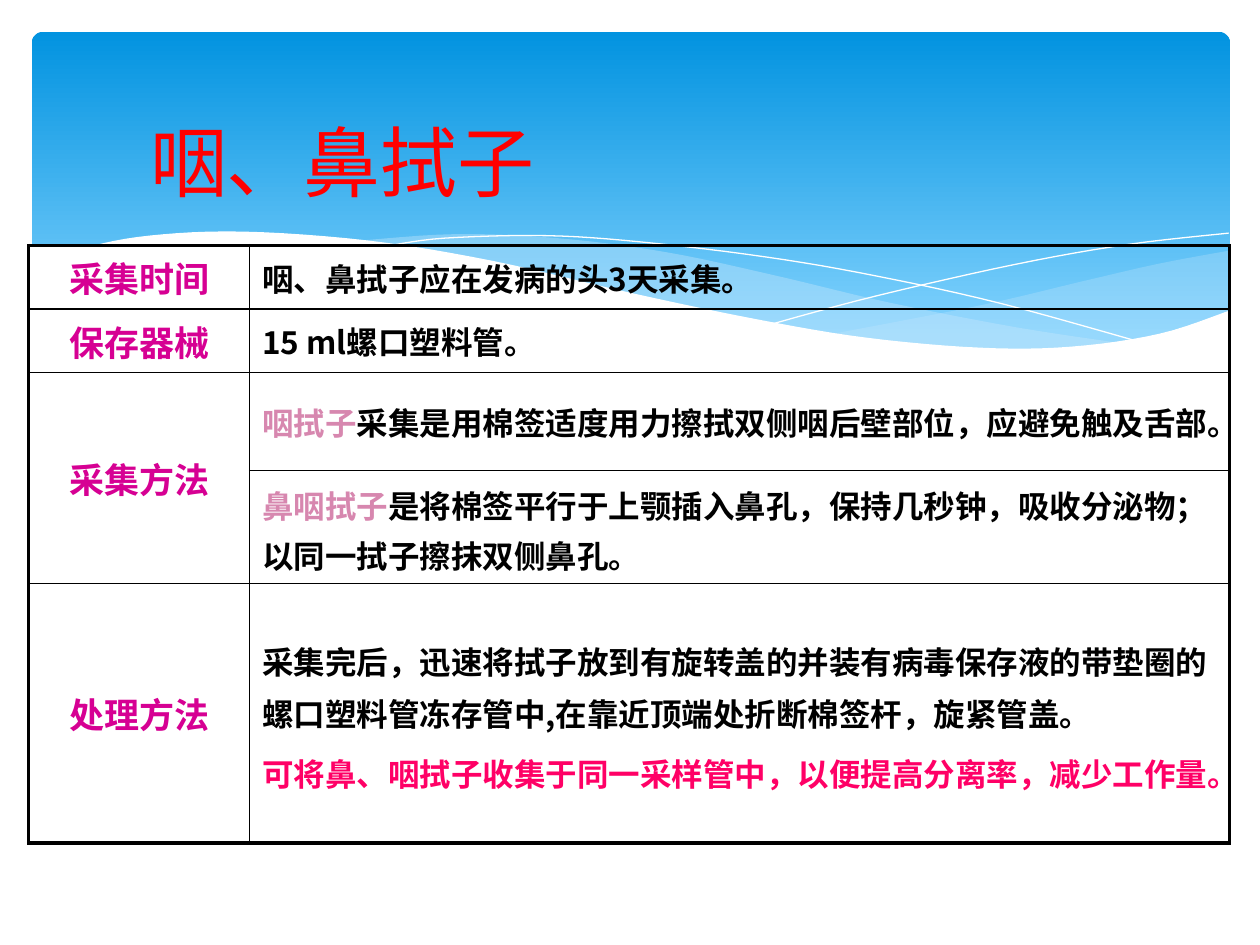
from dataclasses import dataclass

from lxml.etree import SubElement
from pptx import Presentation
from pptx.dml.color import RGBColor
from pptx.enum.shapes import MSO_SHAPE
from pptx.enum.text import MSO_ANCHOR, PP_ALIGN
from pptx.oxml.ns import qn
from pptx.util import Cm, Pt


@dataclass(frozen=True)
class Theme:
    font: str = "Noto Sans CJK SC"
    note_font: str = "Arial"
    title_size: float = 44
    label_size: float = 20
    body_size: float = 18
    thin: float = 1
    thick: float = 2.25
    title: str = "FF0000"
    label: str = "D60093"
    body: str = "000000"
    swab: str = "D787AF"
    note: str = "FF0066"
    border: str = "000000"
    white: str = "FFFFFF"
    veil: str = "C6E7FC"
    sky_top: str = "0293E0"
    sky_bottom: str = "83D3FE"


THEME = Theme()

RIGHT_VEIL = [
    [(24.79, 5.05), (23.39, 5.31), (21.87, 5.66), (19.79, 6.15), (16.79, 6.73)],
    [(16.79, 6.73), (18.24, 6.91), (20.12, 7.04), (21.69, 7.01), (23.19, 6.78),
     (24.79, 6.27)],
]
CENTRE_VEIL = [
    [(22.68, 6.93), (20.5, 6.6), (17.93, 6.1), (15.57, 5.54), (13.41, 5.08),
     (11.23, 4.8), (9.17, 4.72), (7.26, 4.85)],
    [(7.26, 4.85), (9.73, 5.26), (12.47, 5.89), (15.27, 6.48), (17.65, 6.86),
     (19.94, 7.06), (22.68, 6.93)],
]
FALLING_LINE = [(7.85, 4.95), (8.97, 4.8), (11, 4.75), (12.95, 4.88),
                (15.44, 5.18), (17.65, 5.56), (20.19, 6.12), (23.04, 6.91)]
RISING_LINE = [(15.57, 6.53), (17.65, 5.97), (20.47, 5.33), (22.73, 4.93),
               (24.77, 4.7)]
WHITE_CREST = [(24.82, 6.25), (23.37, 6.73), (21.59, 6.99), (19.76, 7.01),
               (17.48, 6.81), (15.32, 6.45), (12.78, 5.92), (9.93, 5.26),
               (7.42, 4.85), (4.9, 4.67), (3.02, 4.75), (1.7, 5), (0.58, 5.41)]
WHITE_BASE = [(0.58, 8.36), (24.82, 8.36)]

# Each row: label, line spacing, paragraphs made of (text, colour, font) spans.
ROWS = [
    ("采集时间", 1, [[("咽、鼻拭子应在发病的头3天采集。", THEME.body, THEME.font)]]),
    ("保存器械", 1, [[("15 ml螺口塑料管。", THEME.body, THEME.font)]]),
    ("采集方法", 1, [[
        ("咽拭子", THEME.swab, THEME.font),
        ("采集是用棉签适度用力擦拭双侧咽后壁部位，应避免触及舌部。", THEME.body, THEME.font),
    ]]),
    (None, 1.1, [[
        ("鼻咽拭子", THEME.swab, THEME.font),
        ("是将棉签平行于上颚插入鼻孔，保持几秒钟，吸收分泌物；以同一拭子擦抹双侧鼻孔。",
         THEME.body, THEME.font),
    ]]),
    ("处理方法", 1.15, [
        [("采集完后，迅速将拭子放到有旋转盖的并装有病毒保存液的带垫圈的螺口塑料管冻存管中,"
          "在靠近顶端处折断棉签杆，旋紧管盖。", THEME.body, THEME.font)],
        [("可将鼻、咽拭子收集于同一采样管中，以便提高分离率，减少工作量。",
          THEME.note, THEME.note_font)],
    ]),
]
COLUMN_WIDTHS = [4.45, 19.76]
ROW_HEIGHTS = [1.22, 1.22, 1.98, 2.03, 5.23]


def smooth_curve(knots, steps=6):
    """Return points on a Catmull-Rom curve through the knots."""
    padded = [knots[0], *knots, knots[-1]]
    points = [knots[0]]
    for a, b, c, d in zip(padded, padded[1:], padded[2:], padded[3:]):
        for step in range(1, steps + 1):
            t = step / steps
            points.append(tuple(
                q + t * (r - p + t * (2 * p - 5 * q + 4 * r - s
                                      + t * (3 * (q - r) + s - p))) / 2
                for p, q, r, s in zip(a, b, c, d)))
    return points


class SlideBuilder:
    def __init__(self, page, theme):
        self.page = page
        self.theme = theme

    def add_span(self, para, text, size, color, font, bold=True):
        span = para.add_run()
        span.text = text
        span.font.size = Pt(size)
        span.font.bold = bold
        span.font.name = font
        span.font.color.rgb = RGBColor.from_string(color)
        SubElement(span.font._element, qn("a:ea"), typeface=self.theme.font)

    def add_sky(self, left, top, width, height):
        sky = self.page.shapes.add_shape(
            MSO_SHAPE.ROUNDED_RECTANGLE, Cm(left), Cm(top), Cm(width), Cm(height))
        sky.adjustments[0] = 0.034
        sky.shadow.inherit = False
        sky.line.fill.background()
        sky.fill.gradient()
        sky.fill.gradient_angle = 270
        first, last = sky.fill.gradient_stops
        first.color.rgb = RGBColor.from_string(self.theme.sky_top)
        last.color.rgb = RGBColor.from_string(self.theme.sky_bottom)
        last.position = 0.9

    def add_outline(self, points, closed):
        (left, top), *others = [(Cm(x), Cm(y)) for x, y in points]
        builder = self.page.shapes.build_freeform(left, top)
        builder.add_line_segments(others, close=closed)
        outline = builder.convert_to_shape()
        outline.shadow.inherit = False
        return outline

    def add_wave(self, points, color, opacity=100):
        wave = self.add_outline(points, closed=True)
        wave.line.fill.background()
        wave.fill.solid()
        wave.fill.fore_color.rgb = RGBColor.from_string(color)
        if opacity < 100:
            tint = wave._element.spPr.find(".//" + qn("a:srgbClr"))
            SubElement(tint, qn("a:alpha"), val=str(opacity * 1000))

    def add_hairline(self, knots):
        hairline = self.add_outline(smooth_curve(knots), closed=False)
        hairline.fill.background()
        hairline.line.color.rgb = RGBColor.from_string(self.theme.white)
        hairline.line.width = Pt(0)

    def add_title(self, text, left, top, width, height):
        title = self.page.shapes.title
        title.left, title.top = Cm(left), Cm(top)
        title.width, title.height = Cm(width), Cm(height)
        title.text_frame.vertical_anchor = MSO_ANCHOR.MIDDLE
        para = title.text_frame.paragraphs[0]
        para.alignment = PP_ALIGN.LEFT
        self.add_span(para, text, self.theme.title_size, self.theme.title,
                      self.theme.font, bold=False)
        title._element.getparent().append(title._element)

    def set_borders(self, cell, widths):
        """Draw the left, right, top and bottom borders in that order."""
        properties = cell._tc.get_or_add_tcPr()
        for side, width in zip("LRTB", widths):
            line = SubElement(properties, qn(f"a:ln{side}"), w=str(Pt(width)))
            fill = SubElement(line, qn("a:solidFill"))
            SubElement(fill, qn("a:srgbClr"), val=self.theme.border)

    def add_table(self, rows, left, top, widths, heights):
        theme = self.theme
        frame = self.page.shapes.add_table(
            len(heights), len(widths), Cm(left), Cm(top),
            Cm(sum(widths)), Cm(sum(heights)))
        table = frame.table
        table.first_row = table.horz_banding = False
        for column, width in zip(table.columns, widths):
            column.width = Cm(width)
        for row, height in zip(table.rows, heights):
            row.height = Cm(height)

        last = len(rows) - 1
        for index, (label, spacing, paragraphs) in enumerate(rows):
            label_cell, body_cell = table.rows[index].cells
            top_width = theme.thick if index == 0 else theme.thin
            bottom_width = theme.thick if index == last else theme.thin
            self.set_borders(label_cell, (theme.thick, theme.thin, top_width, bottom_width))
            self.set_borders(body_cell, (theme.thin, theme.thick, top_width, bottom_width))
            label_cell.fill.solid()
            label_cell.fill.fore_color.rgb = RGBColor.from_string(theme.white)
            body_cell.fill.background()
            label_cell.vertical_anchor = body_cell.vertical_anchor = MSO_ANCHOR.MIDDLE
            if label is None:
                table.cell(index - 1, 0).merge(label_cell)
            else:
                para = label_cell.text_frame.paragraphs[0]
                para.alignment = PP_ALIGN.CENTER
                self.add_span(para, label, theme.label_size, theme.label, theme.font)
            for number, spans in enumerate(paragraphs):
                text_frame = body_cell.text_frame
                para = text_frame.add_paragraph() if number else text_frame.paragraphs[0]
                para.line_spacing = float(spacing)
                if number:
                    para.space_before = Pt(4)
                for text, color, font in spans:
                    self.add_span(para, text, theme.body_size, color, font)


def main():
    deck = Presentation()
    deck.slide_width, deck.slide_height = Cm(25.4), Cm(19.05)
    page = deck.slides.add_slide(deck.slide_layouts[0])
    subtitle = page.placeholders[1]._element
    subtitle.getparent().remove(subtitle)

    builder = SlideBuilder(page, THEME)
    builder.add_sky(0.64, 0.64, 24.16, 6.86)
    for edges, opacity in ((RIGHT_VEIL, 29), (CENTRE_VEIL, 40)):
        points = [point for edge in edges for point in smooth_curve(edge)]
        builder.add_wave(points, THEME.veil, opacity)
    for knots in (FALLING_LINE, RISING_LINE):
        builder.add_hairline(knots)
    builder.add_wave(smooth_curve(WHITE_CREST) + WHITE_BASE, THEME.white)
    builder.add_title("咽、鼻拭子", 2.77, 1.19, 20.4, 4.09)
    builder.add_table(ROWS, 0.58, 4.95, COLUMN_WIDTHS, ROW_HEIGHTS)
    deck.save("out.pptx")


if __name__ == "__main__":
    main()
